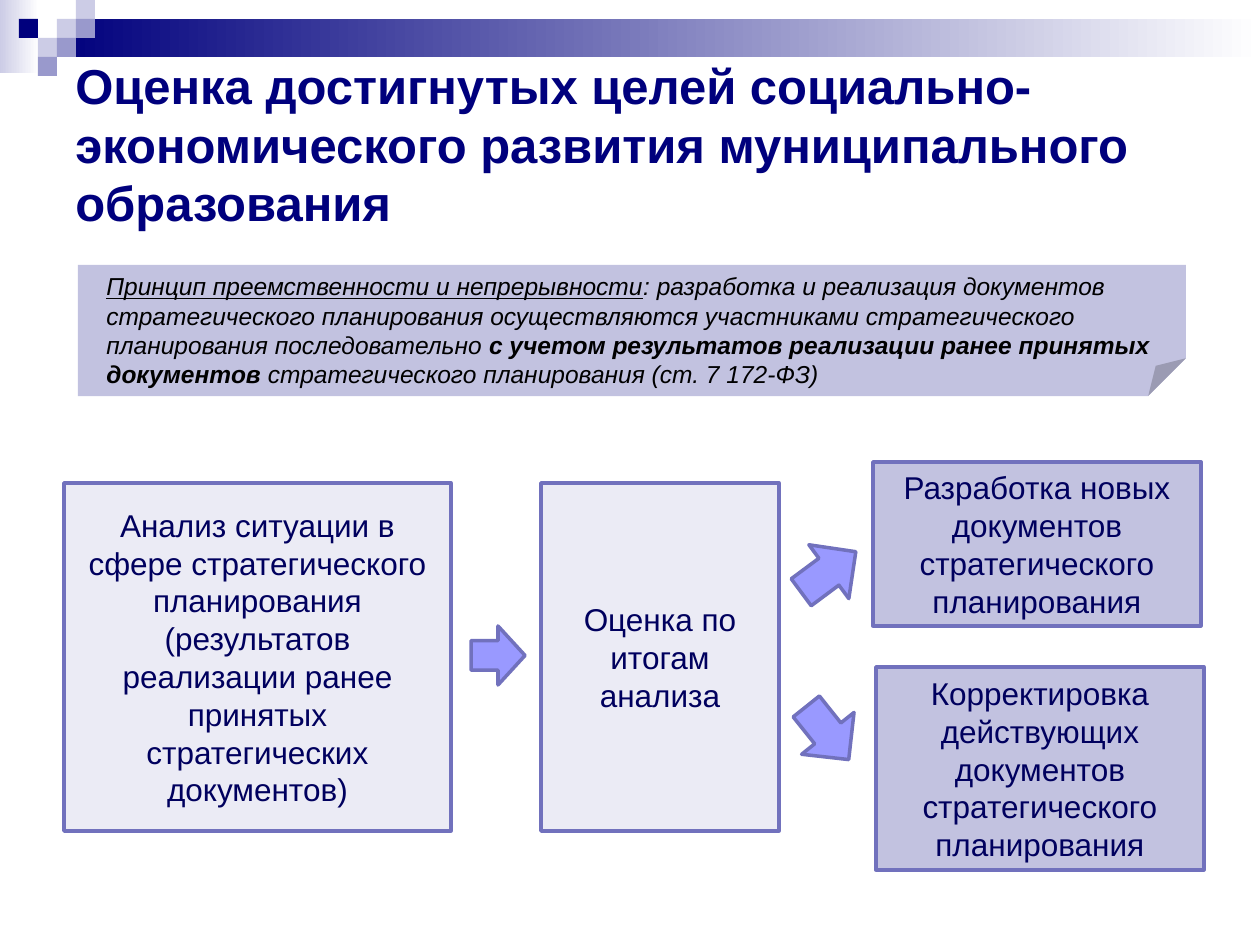
"""Builds the slide on assessing achieved municipal development goals."""
from dataclasses import dataclass

from pptx import Presentation
from pptx.dml.color import RGBColor
from pptx.enum.shapes import MSO_SHAPE
from pptx.enum.text import MSO_ANCHOR, PP_ALIGN
from pptx.util import Pt

RECT = MSO_SHAPE.RECTANGLE
FOLDED = MSO_SHAPE.FOLDED_CORNER
RIGHT_ARROW = MSO_SHAPE.RIGHT_ARROW
DOWN_ARROW = MSO_SHAPE.DOWN_ARROW
MIDDLE = MSO_ANCHOR.MIDDLE
LEFT, CENTER = PP_ALIGN.LEFT, PP_ALIGN.CENTER
PX = 914400 / 126


@dataclass(frozen=True)
class Theme:
    font: str = "Arial"
    navy: str = "00007D"
    ink: str = "00005E"
    black: str = "000000"
    white: str = "FFFFFF"
    mist: str = "CCCCE6"
    lavender: str = "9999CC"
    note: str = "C2C2E0"
    pale: str = "EBEBF5"
    outline: str = "7171BD"
    arrow: str = "9999FF"
    title_size: int = 28
    body_size: int = 18
    note_size: int = 14
    line_width: int = 2


theme = Theme()


def add_block(page, kind, frame, fill, outlined=False):
    block = page.shapes.add_shape(kind, *[round(v * PX) for v in frame])
    block.shadow.inherit = False
    if isinstance(fill, tuple):
        block.fill.gradient()
        block.fill.gradient_angle = 0
        for stop, color in zip(block.fill.gradient_stops, fill):
            stop.color.rgb = RGBColor.from_string(color)
    else:
        block.fill.solid()
        block.fill.fore_color.rgb = RGBColor.from_string(fill)
    if outlined:
        block.line.color.rgb = RGBColor.from_string(theme.outline)
        block.line.width = Pt(theme.line_width)
    else:
        block.line.fill.background()
    return block


def write(box, pieces, size, color, align=LEFT):
    box.text_frame.word_wrap = True
    para = box.text_frame.paragraphs[0]
    para.alignment = align
    for text, styles in pieces:
        span = para.add_run()
        span.text = text
        span.font.name = theme.font
        span.font.size = Pt(size)
        span.font.color.rgb = RGBColor.from_string(color)
        for style in styles:
            setattr(span.font, style, True)


deck = Presentation()
deck.slide_width, deck.slide_height = round(1260 * PX), round(945 * PX)
page = deck.slides.add_slide(deck.slide_layouts[6])

add_block(page, RECT, (0, 0, 39, 73), (theme.mist, theme.white))
add_block(page, RECT, (57, 19, 1203, 38), (theme.navy, theme.white))
tile = 19
for column, row, color in [
    (3, 1, theme.mist),
    (4, 0, theme.mist),
    (4, 1, theme.lavender),
    (2, 2, theme.mist),
    (1, 1, theme.navy),
    (3, 2, theme.lavender),
    (2, 3, theme.lavender),
]:
    add_block(page, RECT, (column * tile, row * tile, tile, tile), color)

title = page.shapes.add_textbox(*[round(v * PX) for v in (63, 63, 1134, 161)])
title.text_frame.vertical_anchor = MIDDLE
write(
    title,
    [("Оценка достигнутых целей социально-экономического развития "
      "муниципального образования", ["bold"])],
    theme.title_size,
    theme.navy,
)

note = add_block(page, FOLDED, (78, 265, 1108, 131), theme.note)
note.element.spPr.prstGeom.rewrite_guides([("adj", 28800)])
principle = page.shapes.add_textbox(*[round(v * PX) for v in (94, 265, 1111, 131)])
write(
    principle,
    [
        ("Принцип преемственности и непрерывности", ["italic", "underline"]),
        (": разработка и реализация документов стратегического планирования "
         "осуществляются участниками стратегического планирования "
         "последовательно ", ["italic"]),
        ("с учетом результатов реализации ранее принятых документов ",
         ["italic", "bold"]),
        ("стратегического планирования (ст. 7 172-ФЗ)", ["italic"]),
    ],
    theme.note_size,
    theme.black,
)

for frame, fill, text in [
    ((876, 667, 328, 203), theme.note,
     "Корректировка действующих документов стратегического планирования"),
    ((64, 483, 387, 348), theme.pale,
     "Анализ ситуации в сфере стратегического планирования (результатов "
     "реализации ранее принятых стратегических документов)"),
    ((541, 483, 238, 348), theme.pale, "Оценка по итогам анализа"),
    ((873, 462, 328, 164), theme.note,
     "Разработка новых документов стратегического планирования"),
]:
    step = add_block(page, RECT, frame, fill, outlined=True)
    step.text_frame.vertical_anchor = MIDDLE
    write(step, [(text, [])], theme.body_size, theme.ink, CENTER)

for kind, frame, angle in [
    (RIGHT_ARROW, (471, 626, 54, 59), 0),
    (DOWN_ARROW, (795, 538, 67, 68), 233.4),
    (DOWN_ARROW, (794, 699, 67, 68), 321.4),
]:
    arrow = add_block(page, kind, frame, theme.arrow, outlined=True)
    arrow.rotation = angle

deck.save("out.pptx")
